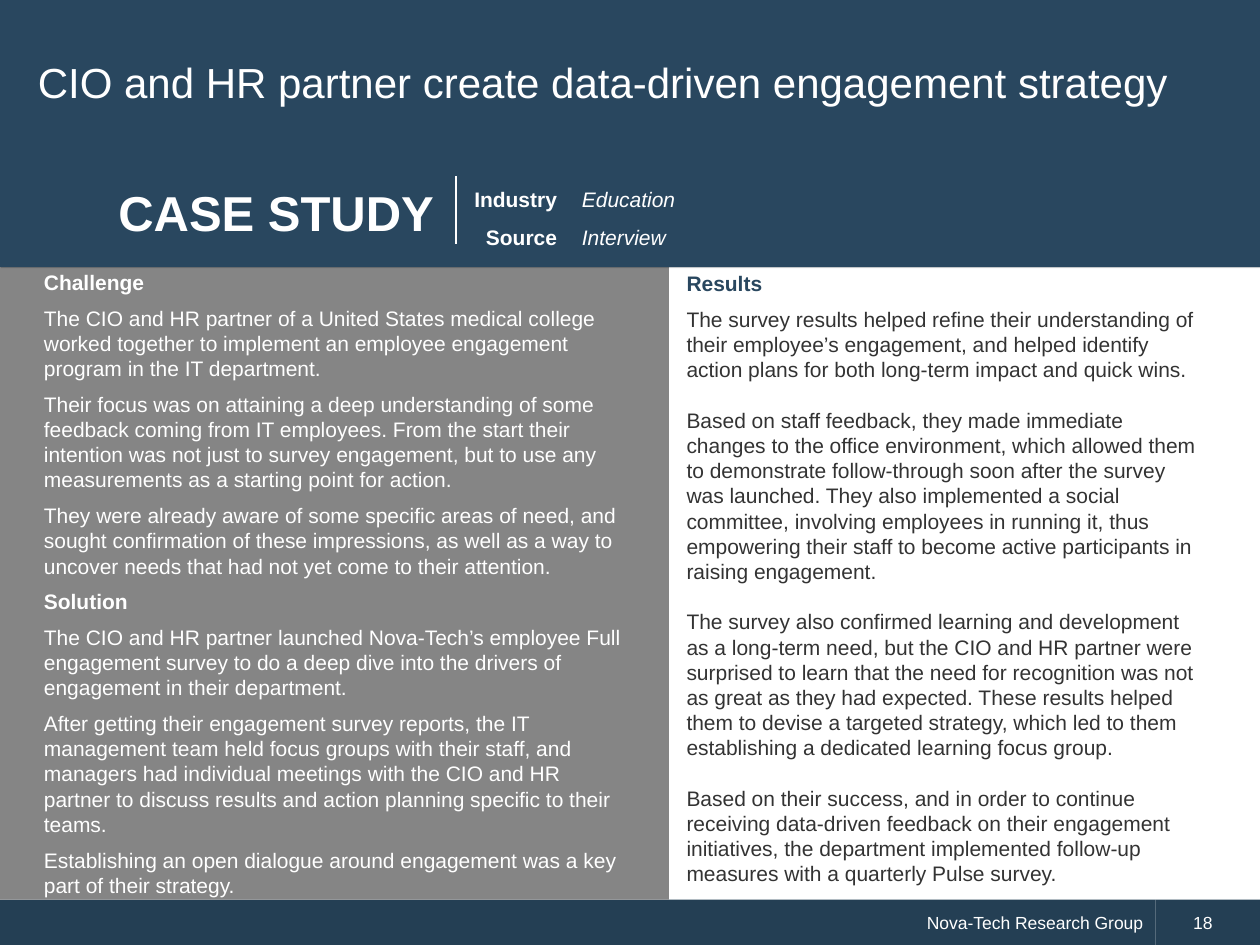
from lxml import etree
from pptx import Presentation
from pptx.dml.color import RGBColor
from pptx.enum.shapes import MSO_CONNECTOR, MSO_SHAPE
from pptx.enum.text import MSO_ANCHOR, MSO_AUTO_SIZE, PP_ALIGN
from pptx.oxml import parse_xml
from pptx.oxml.ns import nsdecls, qn
from pptx.util import Inches, Pt

RECTANGLE = MSO_SHAPE.RECTANGLE
STRAIGHT = MSO_CONNECTOR.STRAIGHT
TOP, MIDDLE = MSO_ANCHOR.TOP, MSO_ANCHOR.MIDDLE
LEFT, RIGHT = PP_ALIGN.LEFT, PP_ALIGN.RIGHT
FONT = "Arial"
COLORS = {
    "navy": "29475F",
    "footer": "243F54",
    "grey": "858585",
    "white": "FFFFFF",
    "text": "333333",
}

CHALLENGE = [
    "The CIO and HR partner of a United States medical college worked together to implement an employee engagement program in the IT department.",
    "Their focus was on attaining a deep understanding of some feedback coming from IT employees. From the start their intention was not just to survey engagement, but to use any measurements as a starting point for action.",
    "They were already aware of some specific areas of need, and sought confirmation of these impressions, as well as a way to uncover needs that had not yet come to their attention.",
]
SOLUTION = [
    "The CIO and HR partner launched Nova-Tech’s employee Full engagement survey to do a deep dive into the drivers of engagement in their department.",
    "After getting their engagement survey reports, the IT management team held focus groups with their staff, and managers had individual meetings with the CIO and HR partner to discuss results and action planning specific to their teams.",
    "Establishing an open dialogue around engagement was a key part of their strategy.",
]
RESULTS = [
    "The survey results helped refine their understanding of their employee’s engagement, and helped identify action plans for both long-term impact and quick wins.",
    "Based on staff feedback, they made immediate changes to the office environment, which allowed them to demonstrate follow-through soon after the survey was launched. They also implemented a social committee, involving employees in running it, thus empowering their staff to become active participants in raising engagement.",
    "The survey also confirmed learning and development as a long-term need, but the CIO and HR partner were surprised to learn that the need for recognition was not as great as they had expected. These results helped them to devise a targeted strategy, which led to them establishing a dedicated learning focus group.",
    "Based on their success, and in order to continue receiving data-driven feedback on their engagement initiatives, the department implemented follow-up measures with a quarterly Pulse survey.",
]


def rgb(name):
    return RGBColor.from_string(COLORS[name])


def place(shape, left, top, width, height):
    shape.left, shape.top = Inches(left), Inches(top)
    shape.width, shape.height = Inches(width), Inches(height)


def prepare_frame(shape, anchor=TOP, left_margin=0.1, right_margin=0.1):
    frame = shape.text_frame
    frame.word_wrap = True
    frame.auto_size = MSO_AUTO_SIZE.NONE
    frame.vertical_anchor = anchor
    frame.margin_left, frame.margin_right = Inches(left_margin), Inches(right_margin)
    frame.margin_top = frame.margin_bottom = Inches(0.05)
    return frame


def format_paragraph(paragraph, size=12, color="white", bold=False, italic=False,
                     align=LEFT, spacing=None, after=0):
    paragraph.alignment = align
    paragraph.space_before = Pt(0)
    paragraph.space_after = Pt(after)
    if spacing:
        paragraph.line_spacing = spacing
    font = paragraph.font
    font.name, font.size, font.bold, font.italic = FONT, Pt(size), bold, italic
    font.color.rgb = rgb(color)


def write_lines(frame, lines, **style):
    frame.text = "\n".join(lines)
    for paragraph in frame.paragraphs:
        format_paragraph(paragraph, **style)


def add_panel(slide, box, fill):
    shape = slide.shapes.add_shape(RECTANGLE, *map(Inches, box))
    shape.shadow.inherit = False
    shape.fill.solid()
    shape.fill.fore_color.rgb = rgb(fill)
    shape.line.fill.background()
    return shape


def add_label(slide, box, lines, fill="navy", anchor=TOP, left_margin=0.1, **style):
    shape = add_panel(slide, box, fill)
    write_lines(prepare_frame(shape, anchor, left_margin), lines, **style)
    return shape


def add_soft_shadow(shape):
    effects = shape._element.spPr.find(qn("a:effectLst"))
    effects.append(parse_xml(
        f'<a:outerShdw {nsdecls("a")} blurRad="0" dist="12700" dir="2700000">'
        '<a:srgbClr val="000000"><a:alpha val="14000"/></a:srgbClr></a:outerShdw>'))


def add_divider(slide, x, top, bottom):
    line = slide.shapes.add_connector(
        STRAIGHT, Inches(x), Inches(top), Inches(x), Inches(bottom))
    line.line.color.rgb = rgb("white")
    line.line.width = Pt(0.75)
    etree.SubElement(line._element.spPr, qn("a:effectLst"))


def add_column(slide, box, sections, heading_color, body_color, gap):
    frame = prepare_frame(slide.shapes.add_textbox(*map(Inches, box)))
    paragraph = frame.paragraphs[0]
    for index, (heading, body) in enumerate(sections):
        if index:
            paragraph = frame.add_paragraph()
        paragraph.text = heading
        format_paragraph(paragraph, color=heading_color, bold=True, after=6)
        for text in body:
            paragraph = frame.add_paragraph()
            paragraph.text = text
            format_paragraph(paragraph, color=body_color, after=gap)


def set_title(slide, text):
    title = slide.shapes.title
    place(title, 0, 0, 10, 1.3)
    title.fill.solid()
    title.fill.fore_color.rgb = rgb("navy")
    frame = prepare_frame(title, MIDDLE, 0.3, 0.3)
    write_lines(frame, [text], size=24, after=8)


def add_footer(slide):
    add_label(slide, (0, 7.14, 9.17, 0.37), ["Nova-Tech Research Group"],
              fill="footer", anchor=MIDDLE, size=10, align=RIGHT)
    add_label(slide, (9.17, 7.14, 0.83, 0.37), ["18"],
              fill="footer", anchor=MIDDLE, left_margin=0.3, size=10)


def add_case_banner(slide):
    banner = add_label(slide, (0, 1.25, 10, 0.87), ["CASE STUDY"],
                       anchor=MIDDLE, left_margin=0.94, size=28, bold=True)
    add_soft_shadow(banner)
    add_label(slide, (3.57, 1.33, 0.95, 0.67), ["Industry", "Source"],
              bold=True, align=RIGHT, spacing=1.5)
    add_divider(slide, 3.62, 1.4, 1.94)
    add_label(slide, (4.52, 1.33, 4.09, 0.71), ["Education", "Interview"],
              italic=True, spacing=1.5)


def main():
    presentation = Presentation()
    presentation.slide_width, presentation.slide_height = Inches(10), Inches(7.5)
    slide = presentation.slides.add_slide(presentation.slide_layouts[5])
    set_title(slide, "CIO and HR partner create data-driven engagement strategy")
    add_footer(slide)
    add_panel(slide, (0, 2.06, 5.31, 5.08), "grey")
    add_case_banner(slide)
    add_column(slide, (0.25, 2.09, 4.85, 5.13),
               [("Challenge", CHALLENGE), ("Solution", SOLUTION)], "white", "white", 6)
    add_column(slide, (5.35, 2.1, 4.29, 5.03),
               [("Results", RESULTS)], "navy", "text", 14.4)
    presentation.save("out.pptx")


if __name__ == "__main__":
    main()
